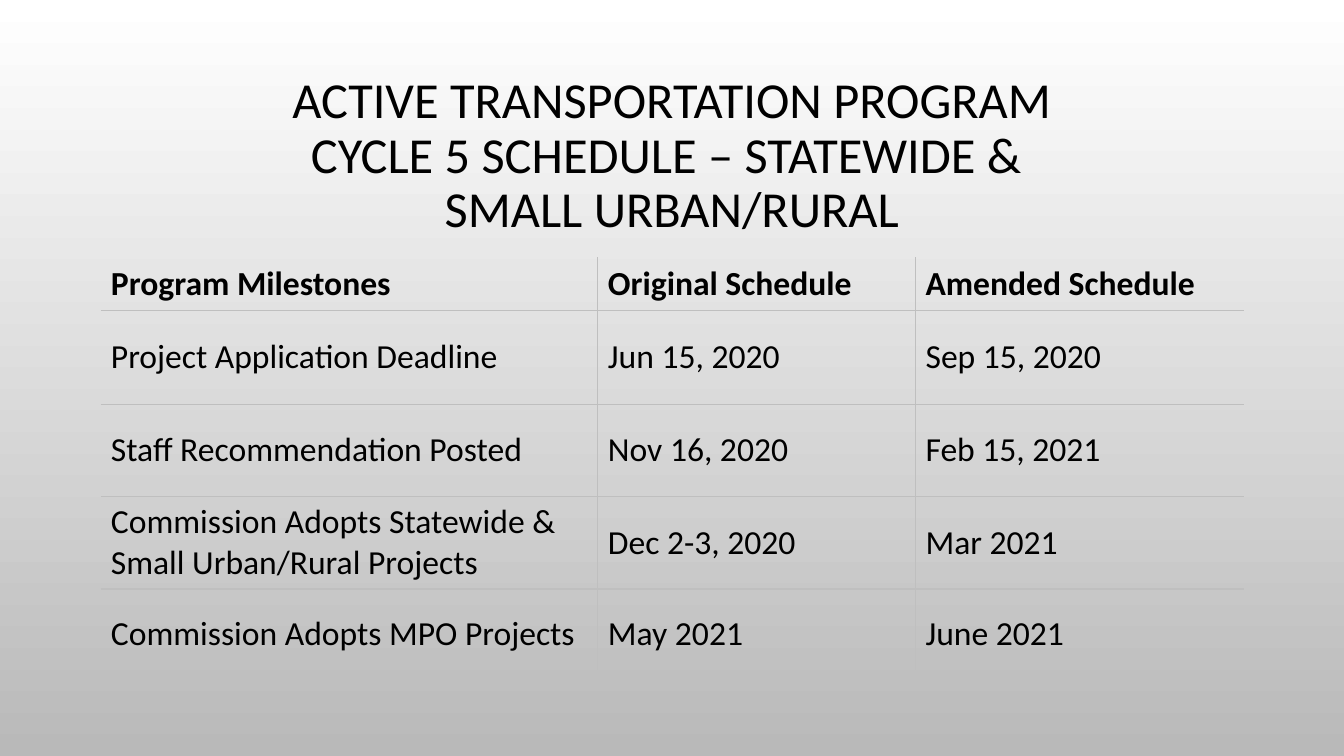
import pptx
import pptx.util
import pptx.dml.color
import pptx.enum.text
import pptx.oxml
import pptx.oxml.ns
from dataclasses import dataclass

Inches = pptx.util.Inches
Pt = pptx.util.Pt
Align = pptx.enum.text.PP_ALIGN
Anchor = pptx.enum.text.MSO_ANCHOR


@dataclass(frozen=True)
class Theme:
    font: str = "Calibri"
    ink: str = "000000"
    rule: str = "BFBFBF"
    top: str = "FFFFFF"
    base: str = "B9B9B9"
    title: int = 36
    body: int = 24
    line: int = 1


THEME = Theme()

TITLE = [
    "ACTIVE TRANSPORTATION PROGRAM",
    "CYCLE 5 SCHEDULE – STATEWIDE & ",
    "SMALL URBAN/RURAL",
]
ROWS = [
    ("Program Milestones", "Original Schedule", "Amended Schedule"),
    ("Project Application Deadline", "Jun 15, 2020", "Sep 15, 2020"),
    ("Staff Recommendation Posted", "Nov 16, 2020", "Feb 15, 2021"),
    ("Commission Adopts Statewide & Small Urban/Rural Projects",
     "Dec 2-3, 2020", "Mar 2021"),
    ("Commission Adopts MPO Projects", "May 2021", "June 2021"),
]
WIDTHS = [4.93, 3.15, 3.26]
HEIGHTS = [0.53, 0.93, 0.92, 0.89, 0.89]


def color(code):
    return pptx.dml.color.RGBColor.from_string(code)


def write(frame, lines, size=THEME.body, bold=False, align=Align.LEFT, space=1.0):
    """Fill a text frame with one paragraph, broken into the given lines."""
    para = frame.paragraphs[0]
    para.alignment = align
    para.line_spacing = space
    for i, line in enumerate(lines):
        if i:
            para.add_line_break()
        run = para.add_run()
        run.text = line
        run.font.name = THEME.font
        run.font.size = Pt(size)
        run.font.bold = bold
        run.font.color.rgb = color(THEME.ink)


def shade(slide):
    """Vertical gradient, light at the top."""
    fill = slide.background.fill
    fill.gradient()
    fill.gradient_angle = 270
    for stop, code in zip(fill.gradient_stops, (THEME.top, THEME.base)):
        stop.color.rgb = color(code)


def head(slide, lines):
    title = slide.shapes.title
    title.left, title.top = Inches(1), Inches(0.68)
    title.width, title.height = Inches(11.33), Inches(1.75)
    title.text_frame.word_wrap = True
    title.text_frame.vertical_anchor = Anchor.MIDDLE
    write(title.text_frame, lines, size=THEME.title, align=Align.CENTER, space=0.9)


def border(cell, sides):
    """Rule the sides marked true, and clear the others."""
    props = cell._tc.get_or_add_tcPr()
    for i, (side, ruled) in enumerate(sides.items()):
        paint = (f'<a:solidFill><a:srgbClr val="{THEME.rule}"/></a:solidFill>'
                 if ruled else "<a:noFill/>")
        props.insert(i, pptx.oxml.parse_xml(
            f'<a:ln{side} {pptx.oxml.ns.nsdecls("a")} w="{Pt(THEME.line)}">'
            f"{paint}</a:ln{side}>"))


def grid(slide, rows, widths, heights):
    frame = slide.shapes.add_table(
        len(rows), len(widths), Inches(1), Inches(2.55),
        Inches(sum(widths)), Inches(sum(heights)))
    table = frame.table
    table.horz_banding = False
    for col, width in zip(table.columns, widths):
        col.width = Inches(width)
    for row, height in zip(table.rows, heights):
        row.height = Inches(height)
    for r, row in enumerate(rows):
        for c, text in enumerate(row):
            cell = table.cell(r, c)
            cell.vertical_anchor = Anchor.MIDDLE
            cell.fill.background()
            # Outer left, right and top edges stay open
            border(cell, {"L": c > 0, "R": c < len(row) - 1, "T": r > 0, "B": True})
            write(cell.text_frame, [text], bold=r == 0)


def main():
    deck = pptx.Presentation()
    deck.slide_width, deck.slide_height = Inches(13.33), Inches(7.5)
    slide = deck.slides.add_slide(deck.slide_layouts[5])
    # Background
    shade(slide)
    # Title
    head(slide, TITLE)
    # Schedule
    grid(slide, ROWS, WIDTHS, HEIGHTS)
    deck.save("out.pptx")


if __name__ == "__main__":
    main()
